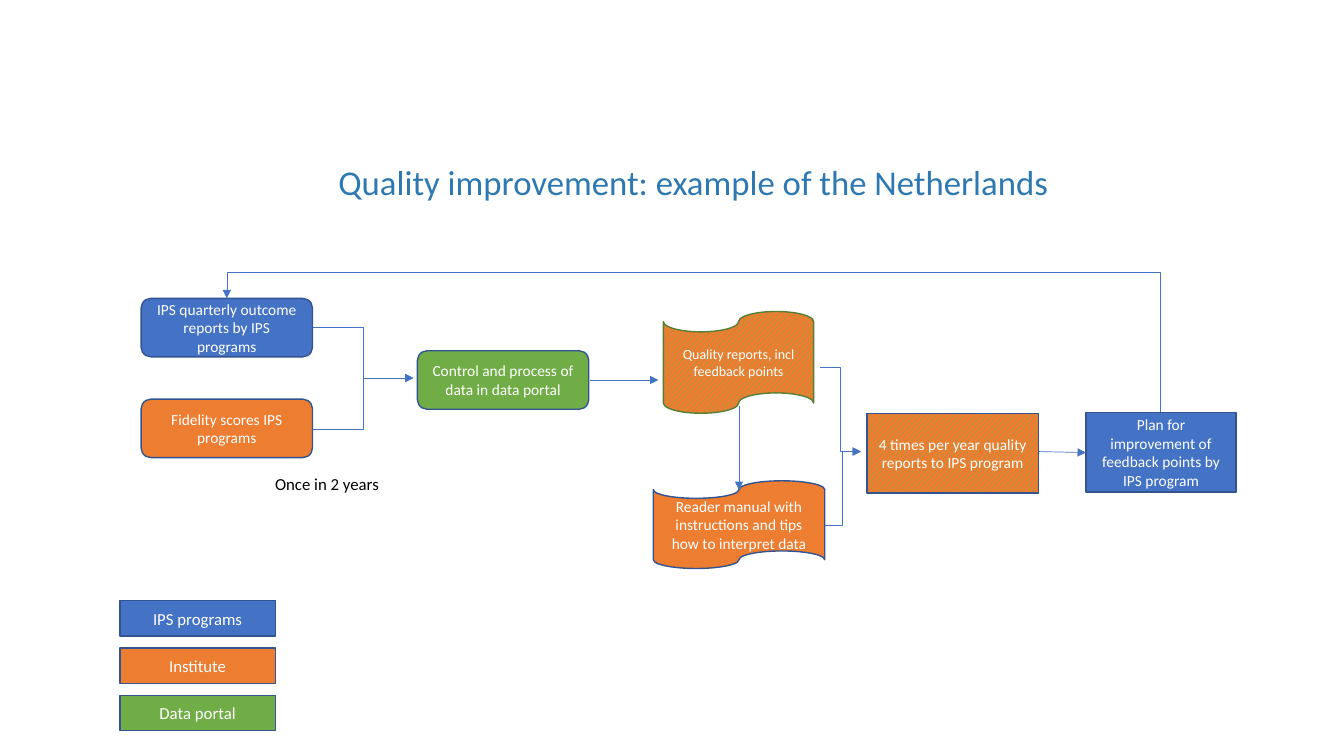
from pptx import Presentation
from pptx.dml.color import RGBColor
from pptx.enum.dml import MSO_PATTERN
from pptx.enum.shapes import MSO_CONNECTOR, MSO_SHAPE
from pptx.enum.text import MSO_ANCHOR, MSO_AUTO_SIZE, PP_ALIGN
from pptx.oxml.ns import qn
from pptx.util import Inches, Pt
from lxml import etree

ROUNDED = MSO_SHAPE.ROUNDED_RECTANGLE
RECTANGLE = MSO_SHAPE.RECTANGLE
TAPE = MSO_SHAPE.FLOWCHART_PUNCHED_TAPE
STRAIGHT = MSO_CONNECTOR.STRAIGHT
ELBOW = MSO_CONNECTOR.ELBOW
DIAGONAL = MSO_PATTERN.WIDE_UPWARD_DIAGONAL
CENTER = PP_ALIGN.CENTER
LEFT = PP_ALIGN.LEFT
MIDDLE = MSO_ANCHOR.MIDDLE
TOP = MSO_ANCHOR.TOP

FONT = "Calibri"
COLORS = {
    "title": "2E79B1",
    "blue": "4472C4",
    "orange": "ED7D31",
    "green": "70AD47",
    "outline": "325491",
    "green outline": "538035",
    "white": "FFFFFF",
    "black": "000000",
}

STEPS = [
    (ROUNDED, (1.4, 2.96, 1.7, 0.58), "blue", "IPS quarterly outcome reports by IPS programs"),
    (ROUNDED, (1.4, 3.96, 1.7, 0.58), "orange", "Fidelity scores IPS programs"),
    (ROUNDED, (4.14, 3.48, 1.7, 0.58), "green", "Control and process of data in data portal"),
    (TAPE, (6.48, 4.77, 1.7, 0.87), "orange",
     "Reader manual with instructions and tips how to interpret data"),
    (RECTANGLE, (8.6, 4.1, 1.7, 0.79), "striped", "4 times per year quality reports to IPS program"),
    (RECTANGLE, (10.77, 4.09, 1.49, 0.79), "blue",
     "Plan for improvement of feedback points by IPS program"),
]
LEGEND = [("blue", "IPS programs"), ("orange", "Institute"), ("green", "Data portal")]
ARROWS = [
    (ELBOW, (3.1, 3.25), (4.1, 3.75)),
    (ELBOW, (3.1, 4.26), (4.1, 3.75)),
    (STRAIGHT, (5.85, 3.77), (6.53, 3.77)),
    (STRAIGHT, (7.33, 4.03), (7.33, 4.86)),
    (ELBOW, (8.18, 5.21), (8.54, 4.48)),
    (ELBOW, (8.13, 3.64), (8.54, 4.48)),
    (STRAIGHT, (10.3, 4.48), (10.77, 4.49)),
]


def color(name):
    """Return the named colour."""
    return RGBColor.from_string(COLORS[name])


def write_text(shape, text, size=11, font_color="white", align=CENTER, anchor=MIDDLE,
               line_spacing=None, wrap=True):
    """Put one formatted paragraph into a shape."""
    frame = shape.text_frame
    frame.text = text
    frame.word_wrap = wrap
    frame.auto_size = MSO_AUTO_SIZE.NONE
    frame.vertical_anchor = anchor
    paragraph = frame.paragraphs[0]
    paragraph.alignment = align
    paragraph.line_spacing = line_spacing
    font = paragraph.runs[0].font
    font.name = FONT
    font.size = Pt(size)
    font.color.rgb = color(font_color)


def place(shape, box):
    """Move and size a shape."""
    shape.left, shape.top, shape.width, shape.height = map(Inches, box)


def add_box(slide, kind, box, fill_name, text, size=11, outline="outline"):
    """Add a labelled shape with a plain or striped fill."""
    shape = slide.shapes.add_shape(kind, *map(Inches, box))
    shape.shadow.inherit = False
    fill = shape.fill
    if fill_name == "striped":
        fill.patterned()
        fill.pattern = DIAGONAL
        fill.fore_color.rgb = color("green")
        fill.back_color.rgb = color("orange")
    else:
        fill.solid()
        fill.fore_color.rgb = color(fill_name)
    shape.line.color.rgb = color(outline)
    shape.line.width = Pt(1)
    write_text(shape, text, size=size)


def add_arrow(slide, kind, start, end):
    """Add a thin blue connector with an arrowhead at its end."""
    connector = slide.shapes.add_connector(kind, *map(Inches, start + end))
    connector.line.color.rgb = color("blue")
    connector.line.width = Pt(0.5)
    properties = connector.element.spPr
    etree.SubElement(properties.find(qn("a:ln")), qn("a:tailEnd"), type="triangle")
    etree.SubElement(properties, qn("a:effectLst"))
    return connector


def add_feedback_arrow(slide, start, end, top):
    """Add a connector that rises from start, runs along top and drops to end."""
    center_x, center_y = (start[0] + end[0]) / 2, (start[1] + end[1]) / 2
    half_rise, half_run = (start[1] - end[1]) / 2, (start[0] - end[0]) / 2
    connector = add_arrow(slide, ELBOW, (center_x - half_rise, center_y + half_run),
                          (center_x + half_rise, center_y - half_run))
    properties = connector.element.spPr
    properties.find(qn("a:xfrm")).set("rot", str(270 * 60000))
    geometry = properties.find(qn("a:prstGeom"))
    adjustments = geometry.find(qn("a:avLst"))
    if adjustments is None:
        adjustments = etree.SubElement(geometry, qn("a:avLst"))
    bend = round((start[1] - top) / (start[1] - end[1]) * 100000)
    etree.SubElement(adjustments, qn("a:gd"), name="adj1", fmla=f"val {bend}")


def main():
    """Build and save the slide."""
    presentation = Presentation()
    presentation.slide_width = Inches(13.33)
    presentation.slide_height = Inches(7.5)
    slide = presentation.slides.add_slide(presentation.slide_layouts[5])

    title = slide.shapes.title
    place(title, (1.79, 1.24, 10.18, 1.18))
    write_text(title, "Quality improvement: example of the Netherlands", size=24.8,
               font_color="title", line_spacing=0.9)

    for kind, box, fill_name, text in STEPS:
        add_box(slide, kind, box, fill_name, text)
    add_box(slide, TAPE, (6.58, 3.09, 1.49, 1.01), "striped",
            "Quality reports, incl feedback points", size=10, outline="green outline")
    for row, (fill_name, text) in enumerate(LEGEND):
        add_box(slide, RECTANGLE, (1.19, 5.96 + 0.47 * row, 1.54, 0.35), fill_name, text, size=12)

    for kind, start, end in ARROWS:
        add_arrow(slide, kind, start, end)
    add_feedback_arrow(slide, (11.51, 4.09), (2.25, 2.96), 2.7)

    note = slide.shapes.add_textbox(*map(Inches, (2.63, 4.65, 1.3, 0.3)))
    write_text(note, "Once in 2 years", size=12, font_color="black", align=LEFT, anchor=TOP,
               wrap=False)
    presentation.save("out.pptx")


if __name__ == "__main__":
    main()
